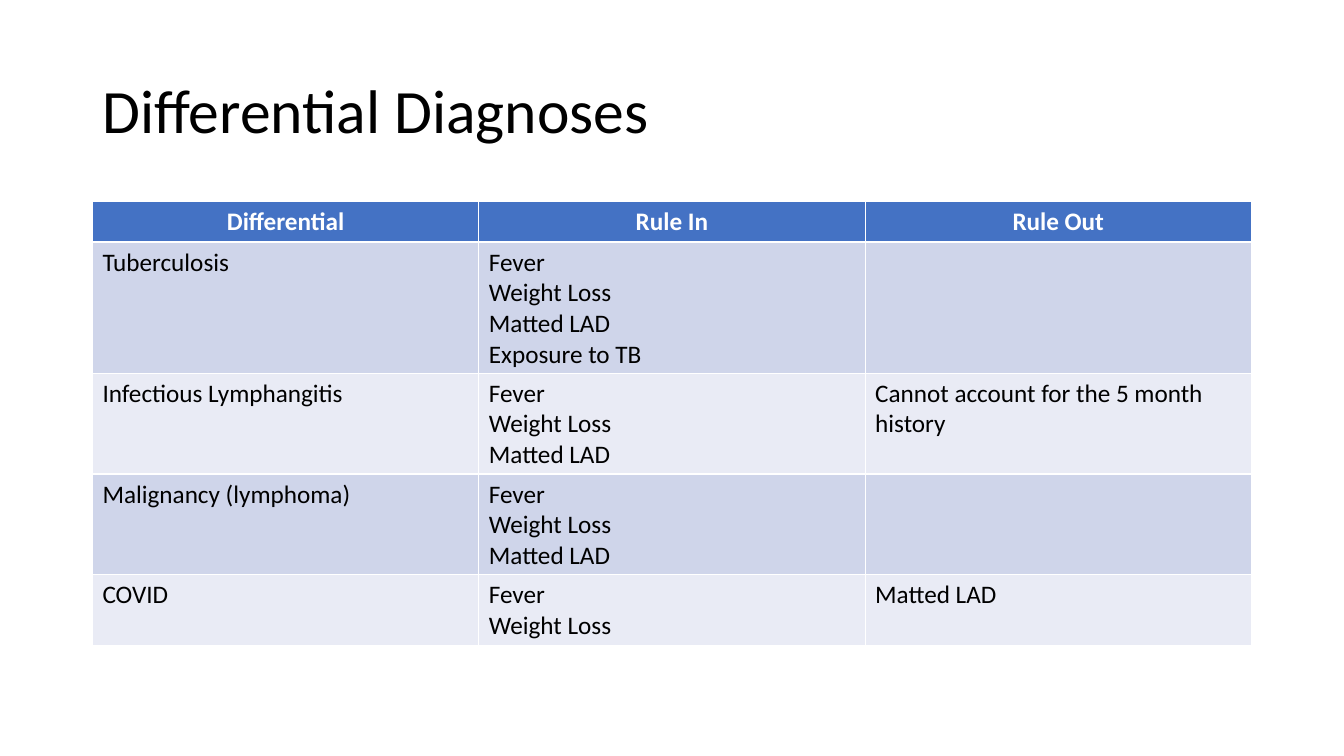
from pptx import Presentation
from pptx.dml.color import RGBColor
from pptx.enum.text import MSO_ANCHOR as Anchor, PP_ALIGN as Align
from pptx.util import Cm, Pt

WHITE = RGBColor(0xFF, 0xFF, 0xFF)
BLACK = RGBColor(0x00, 0x00, 0x00)
HEADER_BLUE = RGBColor(0x44, 0x72, 0xC4)
BANDS = [RGBColor(0xCF, 0xD5, 0xEA), RGBColor(0xE9, 0xEB, 0xF5)]
FONT = "Calibri"
ROW_HEIGHT = Cm(1.03)

HEADINGS = ["Differential", "Rule In", "Rule Out"]
DIAGNOSES = [
    ["Tuberculosis", "Fever\nWeight Loss\nMatted LAD\nExposure to TB", ""],
    ["Infectious Lymphangitis", "Fever\nWeight Loss\nMatted LAD",
     "Cannot account for the 5 month history"],
    ["Malignancy (lymphoma)", "Fever\nWeight Loss\nMatted LAD", ""],
    ["COVID", "Fever\nWeight Loss", "Matted LAD"],
]


def format_text(frame, size, color, bold=False, align=Align.LEFT):
    for para in frame.paragraphs:
        para.alignment = align
        for span in para.runs:
            span.font.name = FONT
            span.font.size = Pt(size)
            span.font.bold = bold
            span.font.color.rgb = color


def add_title(slide, text, left, top, width, height):
    frame = slide.shapes.add_textbox(left, top, width, height).text_frame
    frame.word_wrap = True
    frame.vertical_anchor = Anchor.MIDDLE
    frame.text = text
    frame.paragraphs[0].line_spacing = 0.9
    format_text(frame, 44, BLACK)


def add_diagnosis_table(slide, left, top, width):
    rows = [HEADINGS] + DIAGNOSES
    table = slide.shapes.add_table(
        len(rows), len(HEADINGS), left, top, width, ROW_HEIGHT * len(rows)
    ).table
    for row_index, row in enumerate(rows):
        is_header = row_index == 0
        fill = HEADER_BLUE if is_header else BANDS[(row_index - 1) % 2]
        for column_index, text in enumerate(row):
            cell = table.cell(row_index, column_index)
            cell.fill.solid()
            cell.fill.fore_color.rgb = fill
            cell.text_frame.text = text
            format_text(
                cell.text_frame, 18,
                WHITE if is_header else BLACK,
                bold=is_header,
                align=Align.CENTER if is_header else Align.LEFT,
            )


def main():
    deck = Presentation()
    deck.slide_width, deck.slide_height = Cm(33.87), Cm(19.05)
    slide = deck.slides.add_slide(deck.slide_layouts[6])
    left, width = Cm(2.33), Cm(29.21)
    add_title(slide, "Differential Diagnoses", left, Cm(1.01), width, Cm(3.68))
    add_diagnosis_table(slide, left, Cm(5.07), width)
    deck.save("out.pptx")


if __name__ == "__main__":
    main()
